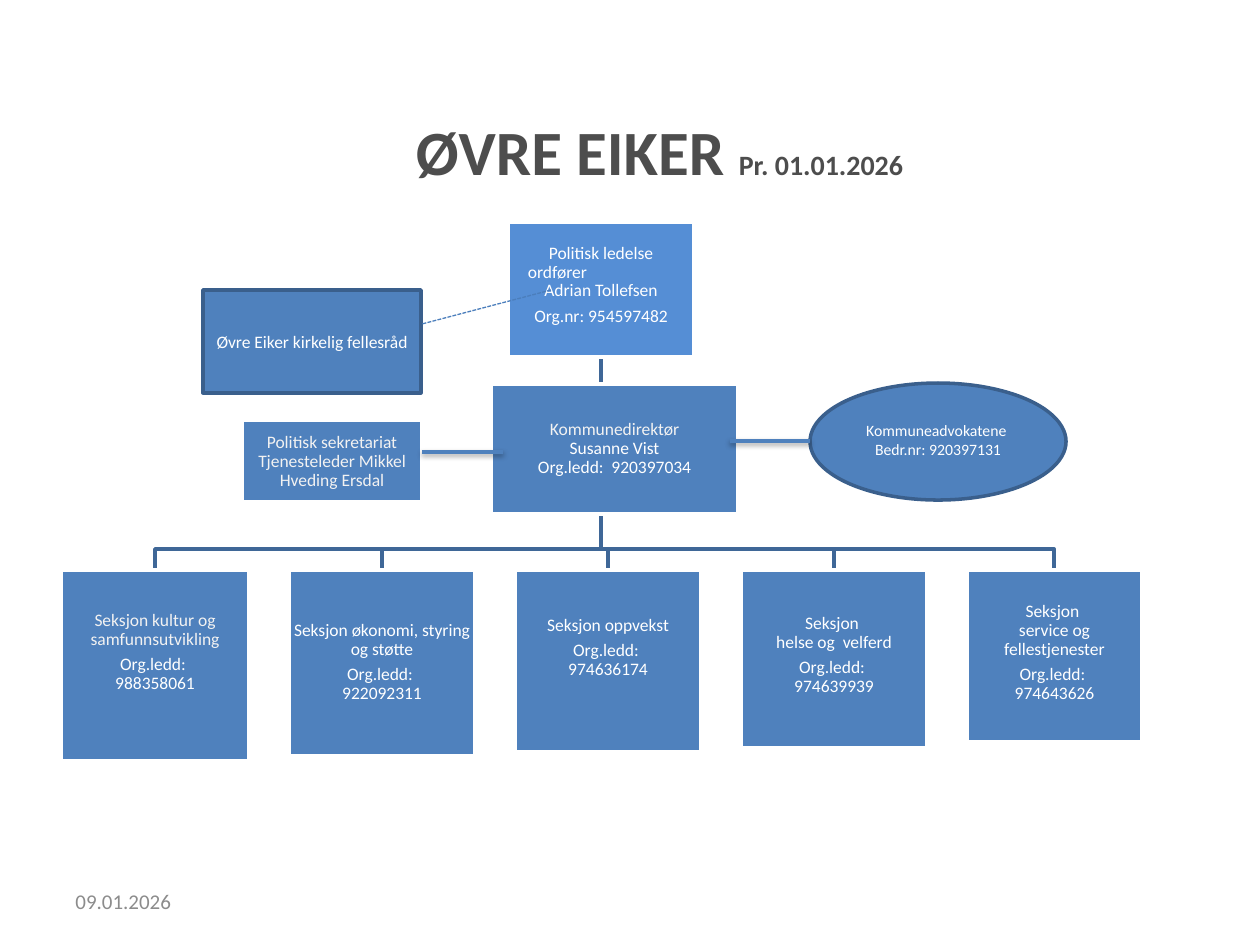
from lxml import etree
from pptx import Presentation
from pptx.dml.color import RGBColor
from pptx.enum.dml import MSO_LINE
from pptx.enum.shapes import MSO_CONNECTOR, MSO_SHAPE
from pptx.enum.text import MSO_ANCHOR, PP_ALIGN
from pptx.oxml import parse_xml
from pptx.oxml.ns import nsdecls, qn
from pptx.util import Inches, Pt

PX = Inches(1) / 126
WHITE = RGBColor(0xFF, 0xFF, 0xFF)
OFF_WHITE = RGBColor(0xF2, 0xF2, 0xF2)
BLUE = RGBColor(0x4F, 0x81, 0xBD)
LIGHT_BLUE = RGBColor(0x55, 0x8E, 0xD5)
DARK_BLUE = RGBColor(0x3A, 0x5F, 0x8C)
TREE_BLUE = RGBColor(0x3F, 0x67, 0x97)
DASH_BLUE = RGBColor(0x4B, 0x7E, 0xBC)
TITLE_GRAY = RGBColor(0x4D, 0x4D, 0x4D)
DATE_GRAY = RGBColor(0x8C, 0x8C, 0x8C)

SHADOW = (f'<a:effectLst {nsdecls("a")}><a:outerShdw blurRad="39370" dist="20320" '
          'dir="5400000" rotWithShape="0"><a:srgbClr val="000000">'
          '<a:alpha val="38000"/></a:srgbClr></a:outerShdw></a:effectLst>')

prs = Presentation()
prs.slide_width, prs.slide_height = Inches(10), Inches(7.5)
slide = prs.slides.add_slide(prs.slide_layouts[6])
shapes = slide.shapes


def px(*lengths):
    return [round(length * PX) for length in lengths]


def add_unit(place, paragraphs, text_top=None, kind=MSO_SHAPE.RECTANGLE, fill=BLUE,
             edge=WHITE, size=10, spacing=0.9, margin=1):
    """Draw a unit box; text starts text_top px below its top, or is centred."""
    unit = shapes.add_shape(kind, *px(*place))
    unit.shadow.inherit = False
    unit.fill.solid()
    unit.fill.fore_color.rgb = fill
    unit.line.color.rgb = edge
    unit.line.width = Pt(2)
    frame = unit.text_frame
    frame.word_wrap = True
    frame.margin_left = frame.margin_right = px(margin)[0]
    frame.margin_top, frame.margin_bottom = px(text_top or 1, 1)
    frame.vertical_anchor = MSO_ANCHOR.MIDDLE if text_top is None else MSO_ANCHOR.TOP
    for index, (text, color) in enumerate(paragraphs):
        paragraph = frame.paragraphs[0] if index == 0 else frame.add_paragraph()
        paragraph.text = text
        paragraph.alignment = PP_ALIGN.CENTER
        paragraph.line_spacing = spacing
        paragraph.font.name = "Calibri"
        paragraph.font.size = Pt(size)
        paragraph.font.color.rgb = color
    return unit


# left, width, height, text top, name, organisation number, name colour
sections = [
    (61, 188, 191, 41, "Seksjon kultur og samfunnsutvikling", "988358061", OFF_WHITE),
    (289, 186, 186, 51, "Seksjon økonomi, styring og støtte", "922092311", WHITE),
    (515, 186, 182, 46, "Seksjon oppvekst", "974636174", WHITE),
    (741, 186, 178, 44, "Seksjon \vhelse og  velferd", "974639939", WHITE),
    (967, 175, 172, 32, "Seksjon \vservice og fellestjenester", "974643626", WHITE),
]
SECTION_TOP, BRANCH_Y, TRUNK_X, TRUNK_TOP = 570, 549, 601, 357

for left, width, *_ in sections:
    center = left + width / 2
    outline = shapes.build_freeform(TRUNK_X, TRUNK_TOP, scale=PX)
    outline.add_line_segments(
        [(TRUNK_X, BRANCH_Y), (center, BRANCH_Y), (center, SECTION_TOP)], close=False)
    branch = outline.convert_to_shape()
    branch.shadow.inherit = False
    branch.fill.background()
    branch.line.color.rgb = TREE_BLUE
    branch.line.width = Pt(2)

political = add_unit(
    (508, 222, 186, 135),
    [("Politisk ledelse", WHITE), ("ordfører", WHITE),
     ("Adrian Tollefsen", WHITE), ("Org.nr: 954597482", WHITE)],
    text_top=22, fill=LIGHT_BLUE)
mayor, number = political.text_frame.paragraphs[1], political.text_frame.paragraphs[3]
mayor.alignment = PP_ALIGN.LEFT
mayor._p.get_or_add_pPr().set("marL", str(px(19)[0]))
number.space_before = Pt(3.5)

for left, width, height, text_top, name, org_number, color in sections:
    section = add_unit((left, SECTION_TOP, width, height),
                       [(name, color), (f"Org.ledd: \v{org_number}", WHITE)], text_top)
    section.text_frame.paragraphs[1].space_before = Pt(3.5)

add_unit((491, 384, 247, 130),
         [("Kommunedirektør", OFF_WHITE), ("Susanne Vist\vOrg.ledd:  920397034", WHITE)])
add_unit((242, 420, 180, 82),
         [("Politisk sekretariat\vTjenesteleder Mikkel Hveding Ersdal", OFF_WHITE)],
         text_top=13)

title = shapes.add_textbox(*px(243, 106, 833, 89)).text_frame
title.word_wrap = True
heading = title.paragraphs[0]
heading.alignment = PP_ALIGN.CENTER
heading.font.name = "Calibri"
heading.font.bold = True
heading.font.color.rgb = TITLE_GRAY
for text, size in [("ØVRE EIKER ", 36), ("Pr. 01.01.2026", 16)]:
    run = heading.add_run()
    run.text = text
    run.font.size = Pt(size)

add_unit((810, 383, 256, 117), [("Kommuneadvokatene \vBedr.nr: 920397131", WHITE)],
         text_top=21, kind=MSO_SHAPE.OVAL, edge=DARK_BLUE, size=9, spacing=1.0, margin=13)
add_unit((203, 290, 218, 103), [("Øvre Eiker kirkelig fellesråd", WHITE)],
         edge=DARK_BLUE, spacing=1.0, margin=13)

date = shapes.add_textbox(*px(63, 876, 294, 50)).text_frame
date.word_wrap = True
date.vertical_anchor = MSO_ANCHOR.MIDDLE
day = date.paragraphs[0]
day.text = "09.01.2026"
day.font.name = "Calibri"
day.font.size = Pt(12)
day.font.color.rgb = DATE_GRAY

for ends, color, width, dashed in [
    ((730, 441, 810, 441), BLUE, 2, False),
    ((551, 290, 422, 324), DASH_BLUE, 0.75, True),
    ((422, 452, 503, 452), BLUE, 2, False),
]:
    link = shapes.add_connector(MSO_CONNECTOR.STRAIGHT, *px(*ends))
    link.line.color.rgb = color
    link.line.width = Pt(width)
    if dashed:
        link.line.dash_style = MSO_LINE.SQUARE_DOT
        etree.SubElement(link._element.spPr, qn("a:effectLst"))
    else:
        link._element.spPr.append(parse_xml(SHADOW))

prs.save("out.pptx")
